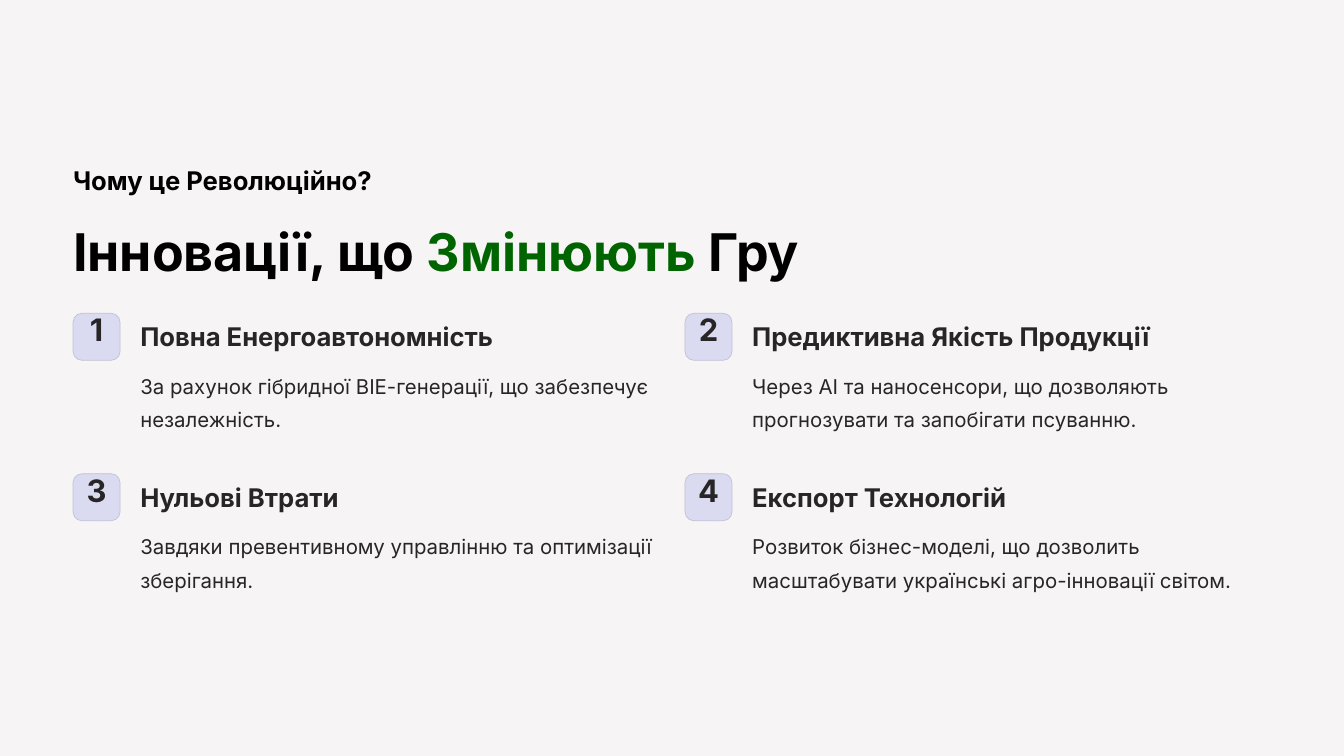
import pptx
import pptx.dml.color
import pptx.enum.shapes
import pptx.enum.text
import pptx.util
from pptx.util import Inches

ALIGN = pptx.enum.text.PP_ALIGN
INK = "272525"
BLACK = "000000"
GREEN = "006400"

SUBTITLE = {"size": 22, "bold": True, "spacing": 27.5}
TITLE = {"size": 44.5, "bold": True, "spacing": 55.5}
NUMBER = {"size": 26.5, "bold": True, "spacing": 26.5}
BODY = {"size": 17.5, "bold": False, "spacing": 28.5}

LEFT, TOP = 0.87, 3.73
COLUMN_STEP, ROW_STEP = 7.285, 1.91
BADGE_SIZE = 0.56

# Heading, heading width, description
INNOVATIONS = [
    ("Повна Енергоавтономність", 4.27,
     "За рахунок гібридної ВІЕ-генерації, що забезпечує незалежність."),
    ("Предиктивна Якість Продукції", 4.8,
     "Через AI та наносенсори, що дозволяють прогнозувати та запобігати псуванню."),
    ("Нульові Втрати", 3.1,
     "Завдяки превентивному управлінню та оптимізації зберігання."),
    ("Експорт Технологій", 3.1,
     "Розвиток бізнес-моделі, що дозволить масштабувати українські агро-інновації світом."),
]


def color(value):
    return pptx.dml.color.RGBColor.from_string(value)


def set_values(target, values):
    for name, value in values.items():
        setattr(target, name, value)


def write(box, spans, style, align=ALIGN.LEFT, wrap=False):
    """Fill a box with one paragraph made of (text, colour) spans."""
    frame = box.text_frame
    set_values(frame, {
        "margin_left": 0, "margin_top": 0, "margin_right": 0, "margin_bottom": 0,
        "word_wrap": wrap,
        "auto_size": pptx.enum.text.MSO_AUTO_SIZE.NONE,
        "vertical_anchor": pptx.enum.text.MSO_ANCHOR.TOP,
    })
    para = frame.paragraphs[0]
    set_values(para, {"alignment": align,
                      "line_spacing": pptx.util.Pt(style["spacing"])})
    for text, ink in spans:
        span = para.add_run()
        span.text = text
        set_values(span.font, {"name": "Inter", "bold": style["bold"],
                               "size": pptx.util.Pt(style["size"])})
        span.font.color.rgb = color(ink)


def add_text(page, left, top, width, height, text, style, ink=INK, **options):
    box = page.shapes.add_textbox(Inches(left), Inches(top),
                                  Inches(width), Inches(height))
    write(box, [(text, ink)], style, **options)


def add_title(page):
    title = page.shapes.title
    set_values(title, {"left": Inches(LEFT), "top": Inches(2.58),
                       "width": Inches(8.67), "height": Inches(0.78)})
    write(title, [("Інновації, що ", BLACK), ("Змінюють", GREEN), (" Гру", BLACK)], TITLE)


def add_badge(page, left, top, number):
    badge = page.shapes.add_shape(
        pptx.enum.shapes.MSO_SHAPE.ROUNDED_RECTANGLE,
        Inches(left), Inches(top), Inches(BADGE_SIZE), Inches(BADGE_SIZE))
    badge.adjustments[0] = 0.19
    badge.shadow.inherit = False
    badge.fill.solid()
    badge.fill.fore_color.rgb = color("DADBF1")
    badge.line.color.rgb = color("C0C1D7")
    badge.line.width = pptx.util.Pt(0.6)
    add_text(page, left + 0.095, top + 0.045, 0.37, 0.47, str(number), NUMBER,
             align=ALIGN.CENTER)


def add_innovation(page, index, heading, heading_width, description):
    row, column = divmod(index, 2)
    left = LEFT + column * COLUMN_STEP
    top = TOP + row * ROW_STEP
    add_badge(page, left, top, index + 1)
    add_text(page, left + 0.8, top + 0.08, heading_width, 0.39, heading, SUBTITLE)
    add_text(page, left + 0.8, top + 0.62, 6.17, 0.79, description, BODY, wrap=True)


def main():
    deck = pptx.Presentation()
    set_values(deck, {"slide_width": Inches(16), "slide_height": Inches(9)})
    page = deck.slides.add_slide(deck.slide_layouts.get_by_name("Title Only"))
    page.background.fill.solid()
    page.background.fill.fore_color.rgb = color("F6F4F4")

    add_text(page, LEFT, 1.95, 3.61, 0.39, "Чому це Революційно?", SUBTITLE, ink=BLACK)
    add_title(page)
    for index, innovation in enumerate(INNOVATIONS):
        add_innovation(page, index, *innovation)
    deck.save("out.pptx")


if __name__ == "__main__":
    main()
